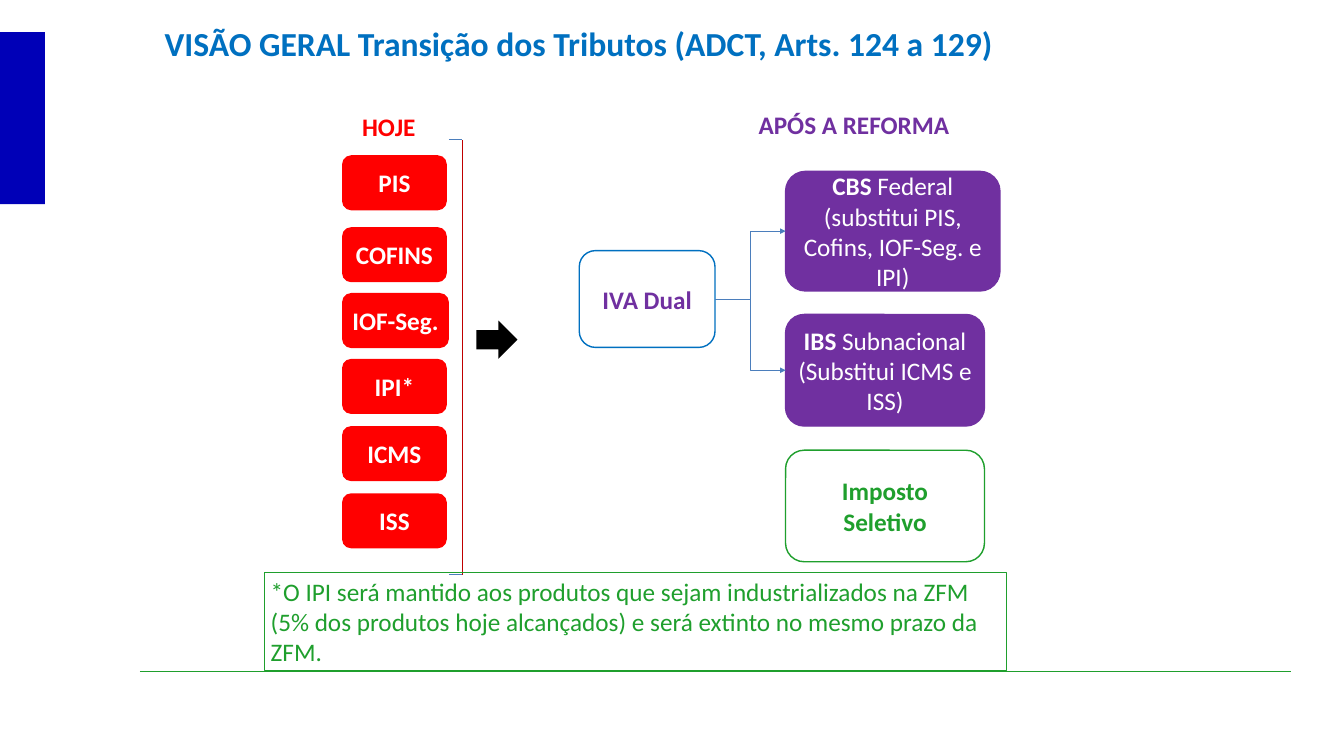
from lxml.etree import SubElement
from pptx import Presentation
from pptx.dml.color import RGBColor
from pptx.enum.shapes import MSO_CONNECTOR as Conn, MSO_SHAPE as Shape
from pptx.enum.text import MSO_ANCHOR as Anchor, PP_ALIGN as Align
from pptx.oxml.ns import qn
from pptx.util import Inches, Pt

RED = RGBColor(0xFF, 0x00, 0x00)
DARK_RED = RGBColor(0xC0, 0x00, 0x00)
PURPLE = RGBColor(0x70, 0x30, 0xA0)
GREEN = RGBColor(0x1F, 0x9F, 0x2D)
BLUE = RGBColor(0x00, 0x70, 0xC0)
STEEL = RGBColor(0x4B, 0x7E, 0xBC)
NAVY = RGBColor(0x00, 0x00, 0xB7)
BLACK = RGBColor(0x00, 0x00, 0x00)
WHITE = RGBColor(0xFF, 0xFF, 0xFF)

TITLE = "VISÃO GERAL Transição dos Tributos (ADCT, Arts. 124 a 129)"
HEADINGS = [  # text, colour, box
    ("HOJE", RED, (5.29, 1.61, 1.59, 0.56)),
    ("APÓS A REFORMA", PURPLE, (11.19, 1.58, 3.96, 0.56)),
]
TAXES_TODAY = [  # name, top, width
    ("PIS", 2.31, 1.56),
    ("COFINS", 3.38, 1.56),
    ("IOF-Seg.", 4.36, 1.59),
    ("IPI*", 5.34, 1.56),
    ("ICMS", 6.34, 1.56),
    ("ISS", 7.34, 1.56),
]
VAT_PARTS = [  # bold name, description, box
    ("CBS ", "Federal (substitui PIS, Cofins, IOF-Seg. e IPI)", (11.69, 2.55, 3.19, 1.78)),
    ("IBS ", "Subnacional (Substitui ICMS e ISS)", (11.69, 4.68, 2.96, 1.66)),
]
NOTE = ("*O IPI será mantido aos produtos que sejam industrializados na ZFM "
        "(5% dos produtos hoje alcançados) e será extinto no mesmo prazo da ZFM.")
BRACKET = [  # start, end, colour
    ((6.68, 2.08), (6.88, 2.08), STEEL),
    ((6.88, 2.08), (6.88, 8.55), DARK_RED),
    ((6.88, 8.55), (6.68, 8.55), STEEL),
]

prs = Presentation()
prs.slide_width, prs.slide_height = Inches(20), Inches(11.25)
s = prs.slides.add_slide(prs.slide_layouts[5])


def write(sp, *runs, color, size=27, align=Align.LEFT, anchor=Anchor.TOP):
    """Fill a shape with one paragraph of (text, bold) runs."""
    tf = sp.text_frame
    tf.word_wrap = True
    tf.vertical_anchor = anchor
    p = tf.paragraphs[0]
    p.alignment = align
    for text, bold in runs:
        r = p.add_run()
        r.text = text
        r.font.name, r.font.size, r.font.bold = "Calibri", Pt(size), bold
        r.font.color.rgb = color


def add_box(kind, box, fill=None, line=None, width=1.5):
    sp = s.shapes.add_shape(kind, *map(Inches, box))
    sp.shadow.inherit = False
    if fill is None:
        sp.fill.background()
    else:
        sp.fill.solid()
        sp.fill.fore_color.rgb = fill
    if line is None:
        sp.line.fill.background()
    else:
        sp.line.color.rgb = line
        sp.line.width = Pt(width)
    return sp


def add_label(box, *runs, color, fill=None, line=None):
    """Add a rounded box with centred text."""
    sp = add_box(Shape.ROUNDED_RECTANGLE, box, fill, line)
    write(sp, *runs, color=color, align=Align.CENTER, anchor=Anchor.MIDDLE)
    return sp


def add_line(start, end, color, kind=Conn.STRAIGHT):
    cx = s.shapes.add_connector(kind, *map(Inches, (*start, *end)))
    cx.line.color.rgb = color
    cx.line.width = Pt(0.75)
    SubElement(cx._element.spPr, qn("a:effectLst"))
    return cx


def join(source, target):
    """Link the right side of source to the left side of target with an elbow arrow."""
    cx = add_line((0, 0), (1, 1), STEEL, Conn.ELBOW)
    cx.begin_connect(source, 3)
    cx.end_connect(target, 1)
    SubElement(cx.line._get_or_add_ln(), qn("a:tailEnd"), type="triangle")


add_line((2.08, 9.99), (19.21, 9.99), GREEN)

for name, top, width in TAXES_TODAY:
    add_label((5.09, top, width, 0.82), (name, True), color=WHITE, fill=RED)
for start, end, color in BRACKET:
    add_line(start, end, color)
add_box(Shape.RIGHT_ARROW, (7.09, 4.77, 0.61, 0.57), fill=BLACK)

vat = add_label((8.62, 3.73, 2.02, 1.44), ("IVA Dual", True), color=PURPLE, line=BLUE)
for name, description, box in VAT_PARTS:
    part = add_label(box, (name, True), (description, False),
                     color=WHITE, fill=PURPLE, line=PURPLE)
    join(vat, part)
add_label((11.69, 6.7, 2.96, 1.66), ("Imposto Seletivo", True), color=GREEN, line=GREEN)

note = add_box(Shape.RECTANGLE, (3.93, 8.52, 11.04, 1.46), line=GREEN, width=0.75)
write(note, (NOTE, False), color=GREEN)

for text, color, box in HEADINGS:
    write(s.shapes.add_textbox(*map(Inches, box)), (text, True), color=color)

title = s.shapes.title
title.left, title.top, title.width, title.height = map(Inches, (2.35, 0.29, 15.3, 0.71))
write(title, (TITLE, True), color=BLUE, size=36)

add_box(Shape.RECTANGLE, (0, 0.48, 0.67, 2.56), fill=NAVY)

prs.save("out.pptx")
